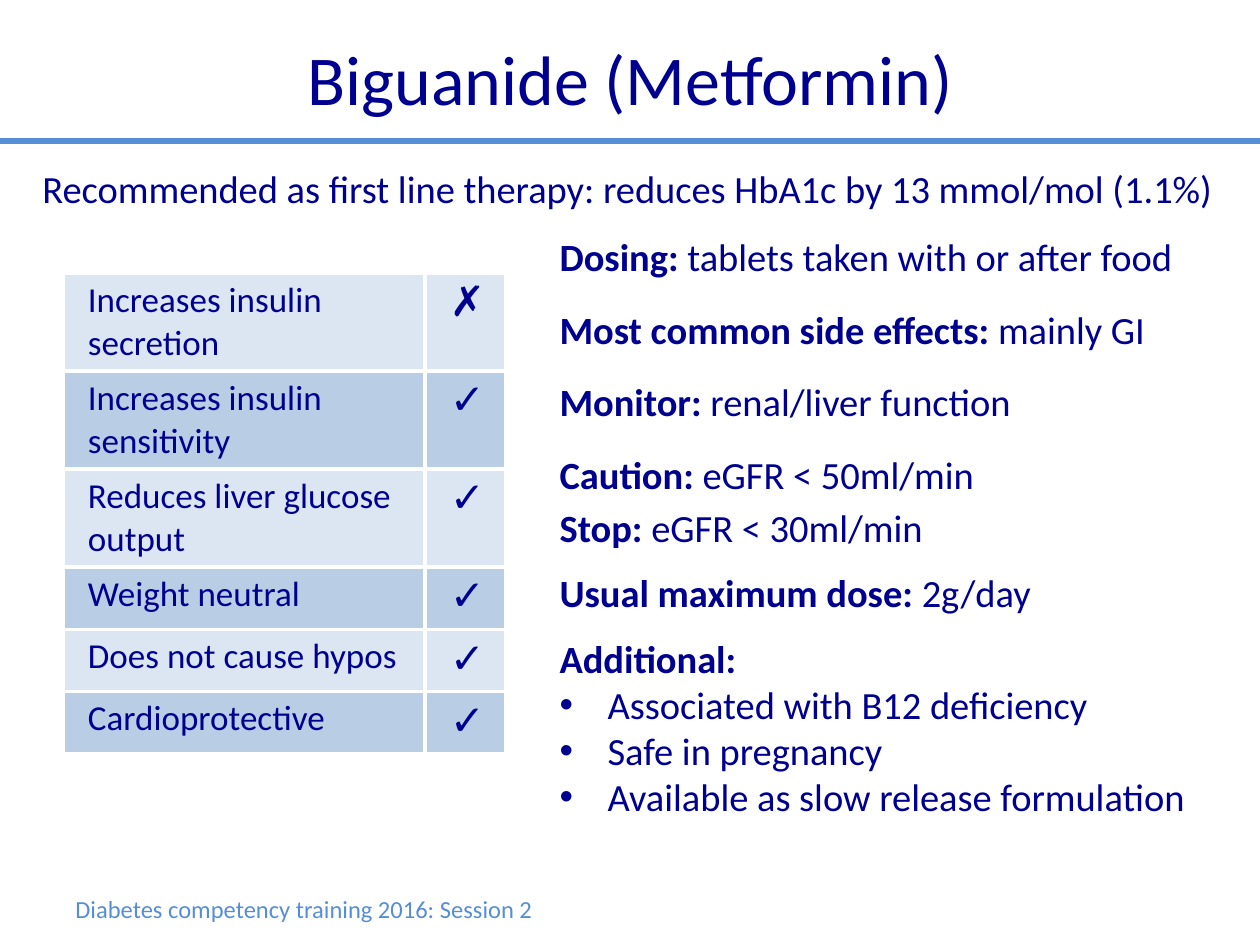
from lxml import etree
from pptx import Presentation
from pptx import util as u
from pptx.dml.color import RGBColor
from pptx.enum import shapes, text
from pptx.oxml import ns

PX = u.Inches(1) / 126
NAVY = RGBColor(0x00, 0x00, 0x90)
BLUE = RGBColor(0x55, 0x8E, 0xD5)
PALE = RGBColor(0xDC, 0xE6, 0xF2)
MID = RGBColor(0xB9, 0xCD, 0xE5)

EFFECTS = [
    ("Increases insulin secretion", "✗"),
    ("Increases insulin sensitivity", "✓"),
    ("Reduces liver glucose output", "✓"),
    ("Weight neutral", "✓"),
    ("Does not cause hypos", "✓"),
    ("Cardioprotective", "✓"),
]
GUIDANCE = [
    ("Dosing: ", "tablets taken with or after food", 0),
    ("Most common side effects: ", "mainly GI", 15),
    ("Monitor:", " renal/liver function", 15),
    ("Caution: ", "eGFR < 50ml/min", 15),
    ("Stop: ", "eGFR < 30ml/min", 4),
    ("Usual maximum dose: ", "2g/day", 11),
    ("Additional:", "", 11),
]
ADDITIONAL = [
    "Associated with B12 deficiency",
    "Safe in pregnancy",
    "Available as slow release formulation",
]


def px(length):
    return u.Emu(round(length * PX))


def place(shape, box):
    shape.left, shape.top, shape.width, shape.height = map(px, box)


def set_font(font, size, color=NAVY, name="Calibri"):
    font.name = name
    font.size = u.Pt(size)
    font.color.rgb = color


def add_title(slide, box, wording):
    title = slide.shapes.title
    place(title, box)
    frame = title.text_frame
    frame.text = wording
    frame.vertical_anchor = text.MSO_ANCHOR.MIDDLE
    frame.auto_size = text.MSO_AUTO_SIZE.NONE
    paragraph = frame.paragraphs[0]
    paragraph.alignment = text.PP_ALIGN.CENTER
    set_font(paragraph.font, 40)


def add_rule(slide, y, width):
    rule = slide.shapes.add_connector(
        shapes.MSO_CONNECTOR.STRAIGHT, 0, px(y), px(width), px(y))
    rule.line.color.rgb = BLUE
    rule.line.width = u.Pt(3)
    etree.SubElement(rule._element.spPr, ns.qn("a:effectLst"))


def add_label(slide, box, wording, size, color, wrap):
    frame = slide.shapes.add_textbox(*map(px, box)).text_frame
    frame.word_wrap = wrap
    frame.text = wording
    set_font(frame.paragraphs[0].font, size, color)


def set_borders(cell):
    properties = cell._tc.get_or_add_tcPr()
    for side in ("lnL", "lnR", "lnT", "lnB"):
        line = etree.SubElement(
            properties, ns.qn(f"a:{side}"), w=str(u.Pt(2.25)))
        fill = etree.SubElement(line, ns.qn("a:solidFill"))
        etree.SubElement(fill, ns.qn("a:srgbClr"), val="FFFFFF")


def fill_cell(cell, wording, color):
    cell.margin_left = cell.margin_right = px(25)
    cell.margin_top = cell.margin_bottom = px(6)
    set_borders(cell)
    cell.fill.solid()
    cell.fill.fore_color.rgb = color
    cell.text = wording


def add_effects(slide, box):
    table = slide.shapes.add_table(len(EFFECTS), 2, *map(px, box)).table
    table.first_row = table.horz_banding = False
    mark_width = 81
    table.columns[0].width = px(box[2] - mark_width)
    table.columns[1].width = px(mark_width)
    for index, (effect, mark) in enumerate(EFFECTS):
        table.rows[index].height = px(98 if index < 3 else 59)
        color = MID if index % 2 else PALE
        effect_cell, mark_cell = table.cell(index, 0), table.cell(index, 1)
        fill_cell(effect_cell, effect, color)
        set_font(effect_cell.text_frame.paragraphs[0].font, 20)
        fill_cell(mark_cell, mark, color)
        paragraph = mark_cell.text_frame.paragraphs[0]
        paragraph.alignment = text.PP_ALIGN.CENTER
        set_font(paragraph.font, 24, name="Arial")


def format_item(paragraph, space, bullet=None):
    indent = px(48) if bullet else 0
    properties = paragraph._p.get_or_add_pPr()
    properties.set("marL", str(indent))
    properties.set("indent", str(-indent))
    paragraph.space_before = u.Pt(space)
    if bullet:
        etree.SubElement(properties, ns.qn("a:buFont"), typeface="Arial")
        etree.SubElement(properties, ns.qn("a:buChar"), char=bullet)
    else:
        etree.SubElement(properties, ns.qn("a:buNone"))
    set_font(paragraph.font, 22)


def add_guidance(slide, box):
    body = slide.placeholders[1]
    place(body, box)
    frame = body.text_frame
    frame.auto_size = text.MSO_AUTO_SIZE.NONE
    for index, (heading, detail, space) in enumerate(GUIDANCE):
        paragraph = frame.add_paragraph() if index else frame.paragraphs[0]
        format_item(paragraph, space)
        run = paragraph.add_run()
        run.text = heading
        run.font.bold = True
        if detail:
            paragraph.add_run().text = detail
    for item in ADDITIONAL:
        paragraph = frame.add_paragraph()
        format_item(paragraph, 0, "•")
        paragraph.add_run().text = item


def main():
    presentation = Presentation()
    presentation.slide_width, presentation.slide_height = px(1260), px(945)
    slide = presentation.slides.add_slide(presentation.slide_layouts[1])
    add_rule(slide, 141, 1260)
    add_label(slide, (63, 888, 488, 43),
              "Diabetes competency training 2016: Session 2", 14, BLUE, False)
    add_title(slide, (63, 14, 1134, 127), "Biguanide (Metformin)")
    add_effects(slide, (63, 273, 443, 471))
    add_guidance(slide, (547, 227, 675, 636))
    add_label(slide, (30, 159, 1217, 59),
              "Recommended as first line therapy: reduces HbA1c by "
              "13 mmol/mol (1.1%)", 22, NAVY, True)
    presentation.save("out.pptx")


if __name__ == "__main__":
    main()
